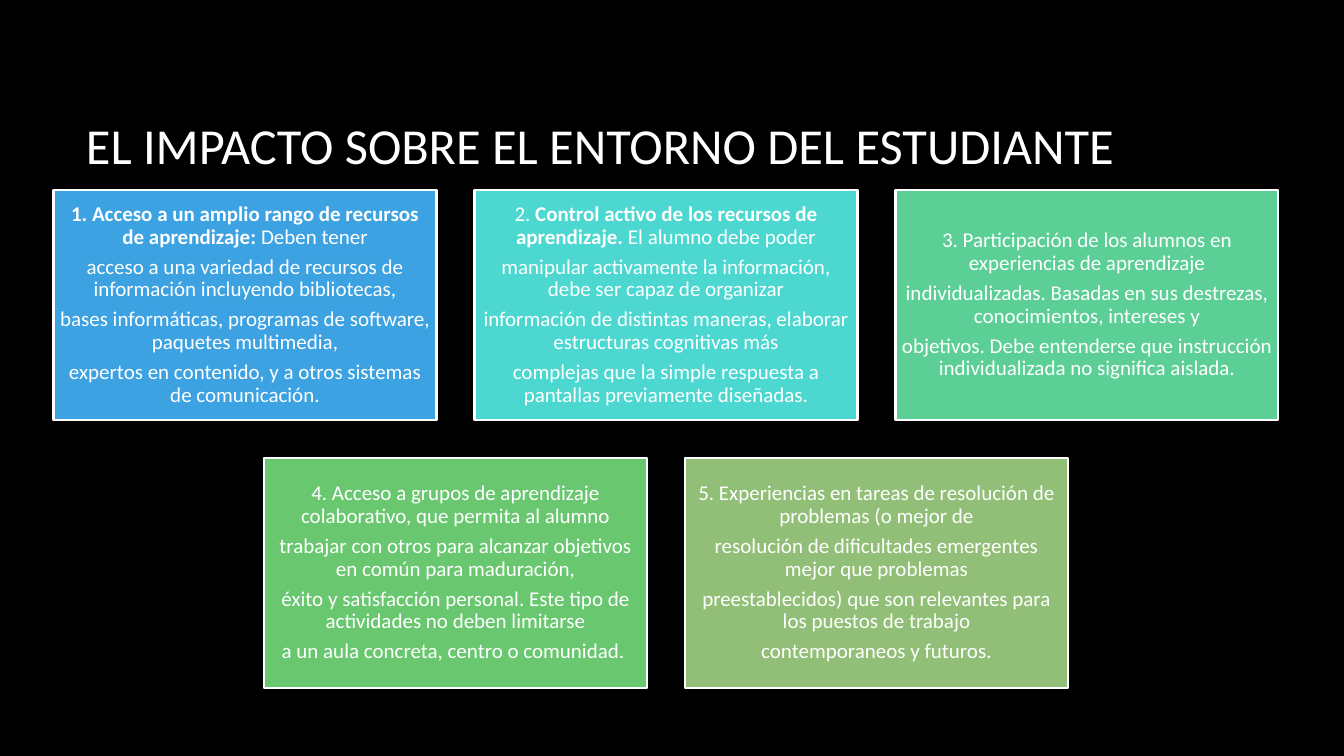
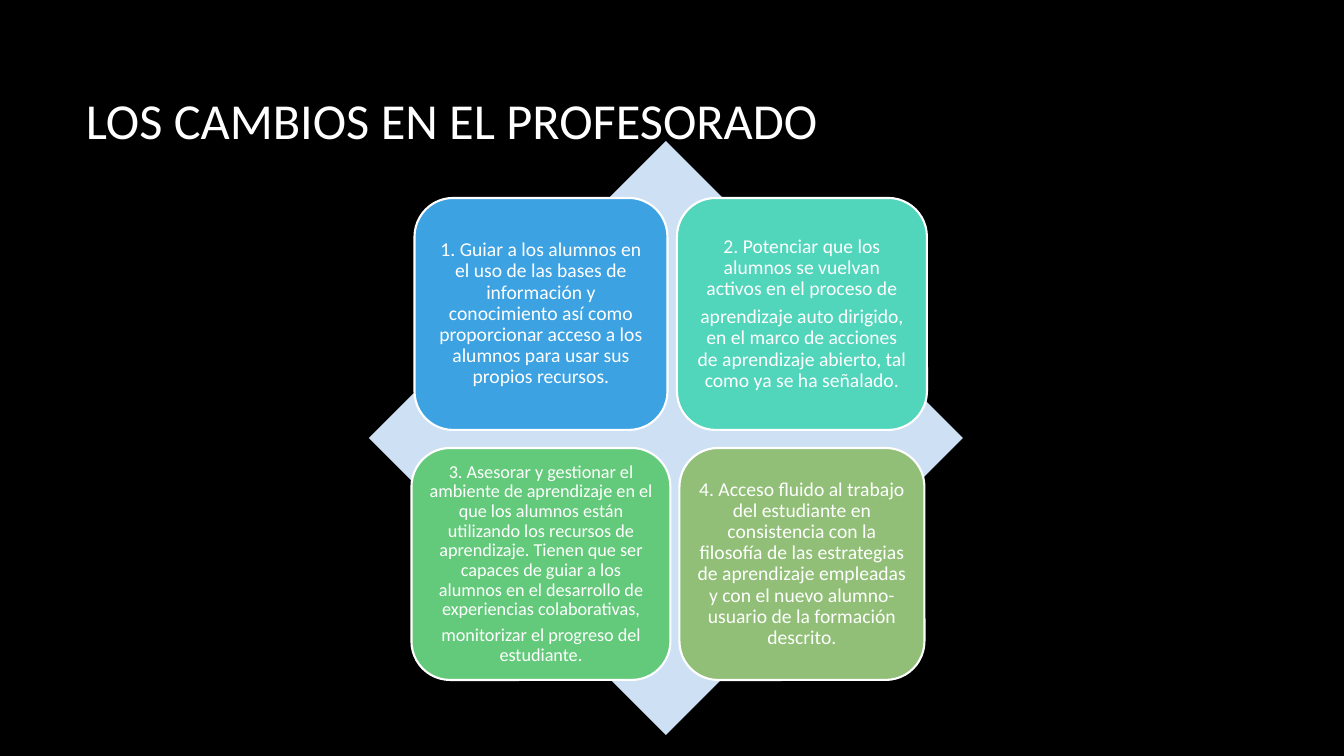
import pptx
import pptx.util
import pptx.dml.color
import pptx.enum.shapes
import pptx.enum.text

Shape = pptx.enum.shapes.MSO_SHAPE
Align = pptx.enum.text.PP_ALIGN
Anchor = pptx.enum.text.MSO_ANCHOR

# Content: a paragraph is a string, or a list of (text, bold) runs
IMPACT_TITLE = "EL IMPACTO SOBRE EL ENTORNO DEL ESTUDIANTE"
IMPACT_ROWS = [
    [
        ("3CA2E2", [
            [("1. Acceso a un amplio rango de recursos de aprendizaje: ", True),
             ("Deben tener", False)],
            "acceso a una variedad de recursos de información incluyendo bibliotecas,",
            "bases informáticas, programas de software, paquetes multimedia,",
            "expertos en contenido, y a otros sistemas de comunicación."]),
        ("4CD8D1", [
            [("2. ", False),
             ("Control activo de los recursos de aprendizaje. ", True),
             ("El alumno debe poder", False)],
            "manipular activamente la información, debe ser capaz de organizar",
            "información de distintas maneras, elaborar estructuras cognitivas más",
            "complejas que la simple respuesta a pantallas previamente diseñadas."]),
        ("5BCF96", [
            "3. Participación de los alumnos en experiencias de aprendizaje",
            "individualizadas. Basadas en sus destrezas, conocimientos, intereses y",
            "objetivos. Debe entenderse que instrucción individualizada no significa aislada."]),
    ],
    [
        ("69C770", [
            "4. Acceso a grupos de aprendizaje colaborativo, que permita al alumno",
            "trabajar con otros para alcanzar objetivos en común para maduración,",
            "éxito y satisfacción personal. Este tipo de actividades no deben limitarse",
            "a un aula concreta, centro o comunidad. "]),
        ("91BF77", [
            "5. Experiencias en tareas de resolución de problemas (o mejor de",
            "resolución de dificultades emergentes mejor que problemas",
            "preestablecidos) que son relevantes para los puestos de trabajo",
            "contemporaneos y futuros."]),
    ],
]

TEACHERS_TITLE = "LOS CAMBIOS EN EL PROFESORADO"
# Fill, width in px, text size, paragraphs; read row by row
TEACHER_CHANGES = [
    ("3CA2E2", 253, 14, [
        "1. Guiar a los alumnos en el uso de las bases de información y conocimiento "
        "así como proporcionar acceso a los alumnos para usar sus propios recursos."]),
    ("51D5BB", 250, 14, [
        "2. Potenciar que los alumnos se vuelvan activos en el proceso de",
        "aprendizaje auto dirigido, en el marco de acciones de aprendizaje abierto, "
        "tal como ya se ha señalado."]),
    ("64CA7B", 259, 13, [
        "3. Asesorar y gestionar el ambiente de aprendizaje en el que los alumnos están "
        "utilizando los recursos de aprendizaje. Tienen que ser capaces de guiar a los "
        "alumnos en el desarrollo de experiencias colaborativas,",
        "monitorizar el progreso del estudiante."]),
    ("91BF77", 245, 14, [
        "4. Acceso fluido al trabajo del estudiante en consistencia con la filosofía de "
        "las estrategias de aprendizaje empleadas y con el nuevo alumno-usuario de la "
        "formación descrito."]),
]

# Shared style
BACKGROUND, WHITE, DIAMOND_FILL = "000000", "FFFFFF", "CEE0F4"
FONT = "Calibri"
TITLE_SIZE = 36
CENTER_X = 666
CARD_INSET = 6


def px(value):
    return pptx.util.Emu(round(value * 914400 / 100.8))


def color(hex_value):
    return pptx.dml.color.RGBColor.from_string(hex_value)


def apply(target, values):
    for name, value in values.items():
        setattr(target, name, value)


def style_run(run, size, bold=False):
    apply(run.font, {"name": FONT, "size": pptx.util.Pt(size), "bold": bold})
    run.font.color.rgb = color(WHITE)


def new_slide(deck, title, title_height):
    slide = deck.slides.add_slide(deck.slide_layouts[6])
    slide.background.fill.solid()
    slide.background.fill.fore_color.rgb = color(BACKGROUND)
    frame = slide.shapes.add_textbox(px(76), px(68), px(1117), px(title_height)).text_frame
    apply(frame, {"word_wrap": True, "vertical_anchor": Anchor.MIDDLE})
    paragraph = frame.paragraphs[0]
    paragraph.line_spacing = 0.9
    run = paragraph.add_run()
    run.text = title
    style_run(run, TITLE_SIZE)
    return slide


def add_figure(slide, preset, box, fill):
    figure = slide.shapes.add_shape(preset, *map(px, box))
    figure.shadow.inherit = False
    figure.fill.solid()
    figure.fill.fore_color.rgb = color(fill)
    figure.line.fill.background()
    return figure


def add_card(slide, preset, box, fill, size, paragraphs):
    card = add_figure(slide, preset, box, fill)
    card.line.color.rgb = color(WHITE)
    card.line.width = pptx.util.Pt(1.5)
    frame = card.text_frame
    apply(frame, {"word_wrap": True, "vertical_anchor": Anchor.MIDDLE})
    apply(frame, {f"margin_{side}": px(CARD_INSET)
                  for side in ("left", "top", "right", "bottom")})
    for index, content in enumerate(paragraphs):
        paragraph = frame.add_paragraph() if index else frame.paragraphs[0]
        apply(paragraph, {"alignment": Align.CENTER, "line_spacing": 0.9,
                          "space_after": pptx.util.Pt(round(size * 0.35, 2))})
        runs = [(content, False)] if isinstance(content, str) else content
        for text, bold in runs:
            run = paragraph.add_run()
            run.text = text
            style_run(run, size, bold)


def build_impact(deck):
    slide = new_slide(deck, IMPACT_TITLE, 160)
    width, height, gap, top = 383, 230, 38, 190
    for row, cards in enumerate(IMPACT_ROWS):
        # Each row is centred on the same axis
        left = CENTER_X - (len(cards) * (width + gap) - gap) / 2
        for column, (fill, paragraphs) in enumerate(cards):
            box = (left + column * (width + gap), top + row * (height + gap), width, height)
            add_card(slide, Shape.RECTANGLE, box, fill, 15, paragraphs)


def build_teachers(deck):
    slide = new_slide(deck, TEACHERS_TITLE, 110)
    side = 594
    add_figure(slide, Shape.DIAMOND, (CENTER_X - side / 2, 141, side, side), DIAMOND_FILL)
    # Two columns of cards, each centred on its column axis
    column_centers = (541, 802)
    height, gap, top = 232, 18, 198
    for index, (fill, width, size, paragraphs) in enumerate(TEACHER_CHANGES):
        row, column = divmod(index, 2)
        box = (column_centers[column] - width / 2, top + row * (height + gap), width, height)
        add_card(slide, Shape.ROUNDED_RECTANGLE, box, fill, size, paragraphs)


def main():
    deck = pptx.Presentation()
    apply(deck, {"slide_width": px(1344), "slide_height": px(756)})
    build_impact(deck)
    build_teachers(deck)
    deck.save("out.pptx")


if __name__ == "__main__":
    main()
